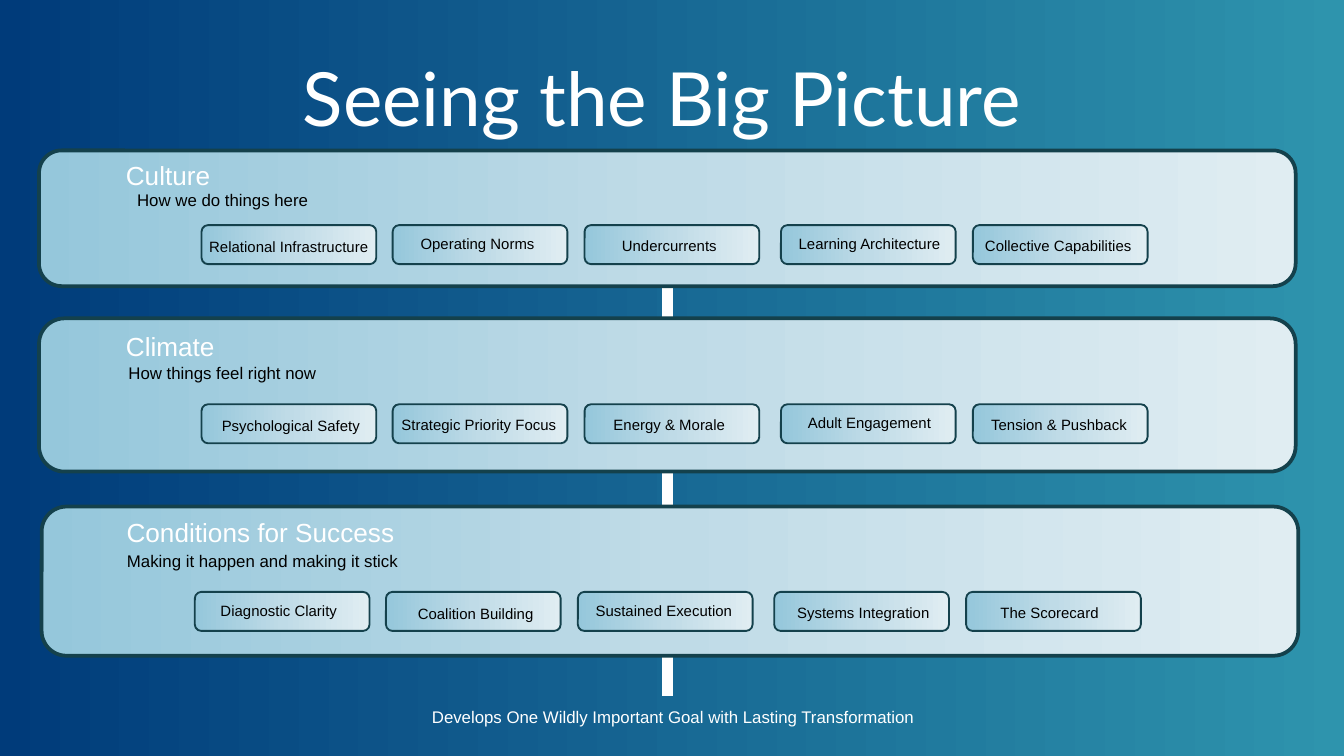
"""Builds the "Seeing the Big Picture" slide: three linked panels of labelled pills."""
from copy import deepcopy

from pptx import Presentation
from pptx.dml.color import RGBColor
from pptx.enum.shapes import MSO_CONNECTOR as LINK, MSO_SHAPE as SHAPE
from pptx.enum.text import MSO_ANCHOR as ANCHOR, MSO_AUTO_SIZE as FIT, PP_ALIGN as ALIGN
from pptx.oxml.ns import qn
from pptx.oxml.xmlchemy import OxmlElement
from pptx.util import Pt

NAVY = RGBColor(0x00, 0x3B, 0x7A)
TEAL = RGBColor(0x2E, 0x94, 0xAD)
SKY = RGBColor(0x95, 0xC7, 0xDB)
MIST = RGBColor(0xBF, 0xDB, 0xE7)
PALE = RGBColor(0xE0, 0xED, 0xF2)
EDGE = RGBColor(0x14, 0x41, 0x4C)
WHITE = RGBColor(0xFF, 0xFF, 0xFF)
BLACK = RGBColor(0x00, 0x00, 0x00)

PILLS = [108, 210.4, 313.2, 418.4, 521.2]
ROWS = [
    {
        "panel": (20.9, 80.6, 72.7), "pill": (0, 120.6),
        "head": ("Culture", 22, 82.1, 136.1),
        "sub": ("How we do things here", -26.6, 97.9, 291.6),
        "labels": [
            ("Relational Infrastructure", 104, 123.8, 101.5),
            ("Operating Norms", 209.1, 122.4, 93.6),
            ("Undercurrents", 311.8, 123.1, 93.6),
            ("Learning Architecture", 414.7, 122.4, 102.2),
            ("Collective Capabilities", 515.9, 123.1, 102.2),
        ],
    },
    {
        "panel": (20.9, 170.6, 82.1), "pill": (0, 216.6),
        "head": ("Climate", 23.2, 173.5, 136.1),
        "sub": ("How things feel right now", 5, 190.8, 228.2),
        "labels": [
            ("Psychological Safety", 103, 219.6, 105.8),
            ("Strategic Priority Focus", 204.1, 218.9, 105.1),
            ("Energy & Morale", 311.8, 218.9, 93.6),
            ("Adult Engagement", 414.7, 218.2, 102.2),
            ("Tension & Pushback", 520.6, 218.9, 93.6),
        ],
    },
    {
        "panel": (22.3, 271.4, 79.9), "pill": (-3.6, 317.1),
        "head": ("Conditions for Success", 24, 272.9, 231.1),
        "sub": ("Making it happen and making it stick", 11, 291.6, 259.2),
        "labels": [
            ("Diagnostic Clarity", 103.3, 319, 92.2),
            ("Coalition Building", 208.1, 320.4, 93.6),
            ("Sustained Execution", 300.6, 319, 110.2),
            ("Systems Integration", 411.8, 319.7, 101.5),
            ("The Scorecard", 505.4, 319.7, 113.8),
        ],
    },
]

deck = Presentation()
deck.slide_width, deck.slide_height = Pt(720), Pt(405)
slide = deck.slides.add_slide(deck.slide_layouts[6])
shapes = slide.shapes


def add_card(left, top, width, height, weight):
    card = shapes.add_shape(SHAPE.ROUNDED_RECTANGLE, Pt(left), Pt(top), Pt(width), Pt(height))
    card.shadow.inherit = False
    card.fill.gradient()
    card.fill.gradient_angle = 0
    stops = card._element.spPr.find(".//" + qn("a:gsLst"))
    stops.insert(1, deepcopy(stops[0]))
    for stop, spot, tone in zip(card.fill.gradient_stops, (0, 0.5, 1), (SKY, MIST, PALE)):
        stop.position = spot
        stop.color.rgb = tone
    card.line.color.rgb = EDGE
    card.line.width = Pt(weight)


def add_text(text, left, top, width, height, size, color, face="Arial", fit=FIT.SHAPE_TO_FIT_TEXT):
    frame = shapes.add_textbox(Pt(left), Pt(top), Pt(width), Pt(height)).text_frame
    frame.text = text
    frame.word_wrap = True
    frame.auto_size = fit
    frame.vertical_anchor = ANCHOR.TOP
    para = frame.paragraphs[0]
    para.alignment = ALIGN.CENTER
    font = para.runs[0].font
    font.name, font.size = face, Pt(size)
    font.color.rgb = color


back = slide.background.fill
back.gradient()
back.gradient_angle = 0
for stop, spot, tone in zip(back.gradient_stops, (0, 1), (NAVY, TEAL)):
    stop.position = spot
    stop.color.rgb = tone

stem = shapes.add_connector(LINK.STRAIGHT, Pt(357.8), Pt(153.4), Pt(357.8), Pt(373))
stem.line.color.rgb = WHITE
stem.line.width = Pt(6)
stem._element.spPr.append(OxmlElement("a:effectLst"))

add_text("Seeing the Big Picture", 48.2, 24.5, 612.7, 46.1, 40, WHITE, "Lato", FIT.NONE)

for row in ROWS:
    left, top, height = row["panel"]
    add_card(left, top, 673.2, height, 2)
    add_text(*row["head"], 24.5, 14, WHITE)
    add_text(*row["sub"], 18, 9, BLACK)
    shift, top = row["pill"]
    for left, label in zip(PILLS, row["labels"]):
        add_card(left + shift, top, 93.6, 20.9, 1)
        add_text(*label, 17.3, 8, BLACK)

add_text("Develops One Wildly Important Goal with Lasting Transformation",
         195.5, 375.1, 329.8, 18, 9, WHITE)

deck.save("out.pptx")
